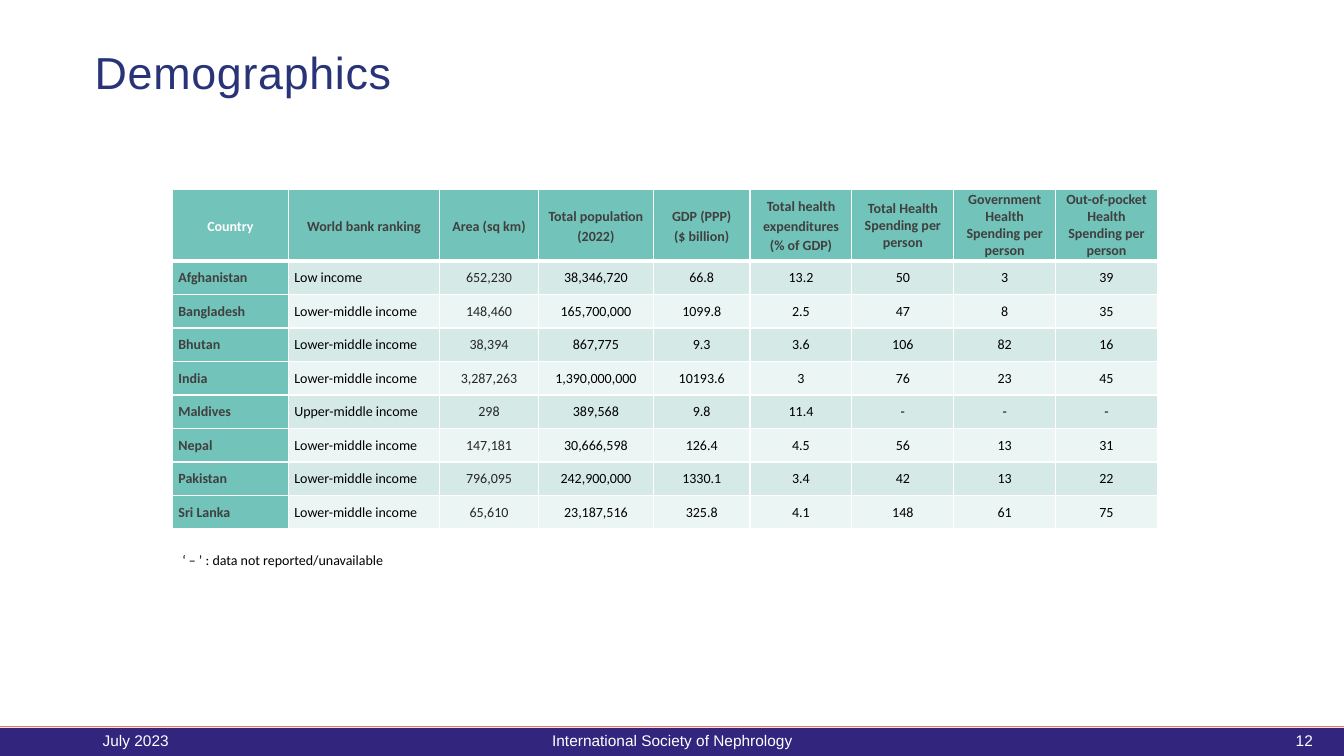
import lxml.etree
import pptx
import pptx.dml.color
import pptx.enum.shapes
import pptx.enum.text
import pptx.oxml.ns
import pptx.util

Inches = pptx.util.Inches
Pt = pptx.util.Pt
Align = pptx.enum.text.PP_ALIGN
Anchor = pptx.enum.text.MSO_ANCHOR
qn = pptx.oxml.ns.qn

TEAL = "72C3B9"
BANDS = ("D5E9E6", "EBF5F3")
COLUMN_WIDTHS = (1.15, 1.5, 0.98, 1.14, 0.96, 1.01, 1.01, 1.01, 1.01)
HEADER_HEIGHT = 0.71
ROW_HEIGHT = 0.3325
HEADERS = (
    "Country", "World bank ranking", "Area (sq km)", "Total population (2022)",
    "GDP (PPP)\n($ billion)", "Total health expenditures\n(% of GDP)",
    "Total Health Spending per person", "Government Health Spending per person",
    "Out-of-pocket Health Spending per person",
)
COUNTRIES = (
    ("Afghanistan", "Low income", "652,230", "38,346,720", "66.8", "13.2", "50", "3", "39"),
    ("Bangladesh", "Lower-middle income", "148,460", "165,700,000", "1099.8", "2.5", "47", "8", "35"),
    ("Bhutan", "Lower-middle income", "38,394", "867,775", "9.3", "3.6", "106", "82", "16"),
    ("India", "Lower-middle income", "3,287,263", "1,390,000,000", "10193.6", "3", "76", "23", "45"),
    ("Maldives", "Upper-middle income", "298", "389,568", "9.8", "11.4", "-", "-", "-"),
    ("Nepal", "Lower-middle income", "147,181", "30,666,598", "126.4", "4.5", "56", "13", "31"),
    ("Pakistan", "Lower-middle income", "796,095", "242,900,000", "1330.1", "3.4", "42", "13", "22"),
    ("Sri Lanka", "Lower-middle income", "65,610", "23,187,516", "325.8", "4.1", "148", "61", "75"),
)


def rgb(value):
    """Turn a hex string into a colour."""
    return pptx.dml.color.RGBColor.from_string(value)


def write_text(frame, text, size=10, font="Calibri", color="000000", bold=False,
               align=Align.LEFT, line_spacing=None, letter_spacing=None):
    """Fill a text frame with one formatted paragraph per line of text."""
    frame.word_wrap = True
    for index, line in enumerate(text.split("\n")):
        paragraph = frame.add_paragraph() if index else frame.paragraphs[0]
        paragraph.alignment = align
        paragraph.line_spacing = line_spacing
        run = paragraph.add_run()
        run.text = line
        run.font.size = Pt(size)
        run.font.name = font
        run.font.bold = bold
        run.font.color.rgb = rgb(color)
        if letter_spacing:
            run._r.get_or_add_rPr().set("spc", str(int(letter_spacing * 100)))


def add_text(slide, box, text, anchor=Anchor.MIDDLE, **text_format):
    """Add a text box at the given left, top, width and height."""
    shape = slide.shapes.add_textbox(*map(Inches, box))
    shape.text_frame.vertical_anchor = anchor
    write_text(shape.text_frame, text, **text_format)


def set_borders(cell, top=1, bottom=1):
    """Draw white borders round a cell, with widths in points."""
    properties = cell._tc.get_or_add_tcPr()
    for side, width in (("L", 1), ("R", 1), ("T", top), ("B", bottom)):
        line = lxml.etree.SubElement(properties, qn(f"a:ln{side}"), w=str(Pt(width)))
        fill = lxml.etree.SubElement(line, qn("a:solidFill"))
        lxml.etree.SubElement(fill, qn("a:srgbClr"), val="FFFFFF")


def style_cell(cell, text, fill, margins, borders, **text_format):
    """Give a cell its borders, fill, margins and text."""
    set_borders(cell, **borders)
    cell.fill.solid()
    cell.fill.fore_color.rgb = rgb(fill)
    cell.vertical_anchor = Anchor.MIDDLE
    side, edge = map(Inches, margins)
    cell.margin_left = cell.margin_right = side
    cell.margin_top = cell.margin_bottom = edge
    write_text(cell.text_frame, text, **text_format)


def add_header_row(table):
    """Fill the heading row of the table."""
    for column, heading in enumerate(HEADERS):
        spending = column >= 6
        style_cell(table.cell(0, column), heading, TEAL,
                   (0.05, 0.02) if spending else (0.02, 0), {"bottom": 3},
                   color="404040" if column else "FFFFFF", bold=True,
                   align=Align.CENTER, line_spacing=None if spending else 1.15)


def add_country_row(table, row, values):
    """Fill one country row, with the band colour set by its position."""
    for column, value in enumerate(values):
        style_cell(table.cell(row, column), value,
                   BANDS[(row - 1) % 2] if column else TEAL,
                   (0.01 if column > 1 else 0.06, 0),
                   {"top": 3 if row == 1 else 1},
                   color={0: "404040", 2: "262626"}.get(column, "000000"),
                   bold=column == 0,
                   align=Align.CENTER if column > 1 else Align.LEFT)


def add_demographics_table(slide, left, top):
    """Add the country table and the note below it."""
    width = sum(COLUMN_WIDTHS)
    height = HEADER_HEIGHT + ROW_HEIGHT * len(COUNTRIES)
    table = slide.shapes.add_table(len(COUNTRIES) + 1, len(HEADERS),
                                   *map(Inches, (left, top, width, height))).table
    table.horz_banding = False
    for column, column_width in zip(table.columns, COLUMN_WIDTHS):
        column.width = Inches(column_width)
    for index, row in enumerate(table.rows):
        row.height = Inches(ROW_HEIGHT if index else HEADER_HEIGHT)
    add_header_row(table)
    for row, values in enumerate(COUNTRIES, start=1):
        add_country_row(table, row, values)
    add_text(slide, (left, top + height + 0.17, 2.4, 0.27),
             "‘ – ’ : data not reported/unavailable", anchor=Anchor.TOP)


def add_footer(slide, top, width, height):
    """Add the footer bar, its rule and its three texts."""
    bar = slide.shapes.add_shape(pptx.enum.shapes.MSO_SHAPE.RECTANGLE,
                                 *map(Inches, (0, top, width, height)))
    bar.shadow.inherit = False
    bar.fill.solid()
    bar.fill.fore_color.rgb = rgb("32257E")
    bar.line.fill.background()
    rule_top = Inches(top - 0.01)
    rule = slide.shapes.add_connector(pptx.enum.shapes.MSO_CONNECTOR.STRAIGHT,
                                      0, rule_top, Inches(width), rule_top)
    rule.line.color.rgb = rgb("FE7055")
    rule.line.width = Pt(0.75)
    lxml.etree.SubElement(rule._element.spPr, qn("a:effectLst"))
    for left, text_width, text, align in (
            (0.92, 3, "July 2023", Align.LEFT),
            (4.42, 4.5, "International Society of Nephrology", Align.CENTER),
            (9.42, 3.7, "12", Align.RIGHT)):
        add_text(slide, (left, top - 0.07, text_width, 0.4), text,
                 size=11, font="Arial", color="FFFFFF", align=align)


def main():
    """Build the demographics slide and save it."""
    presentation = pptx.Presentation()
    presentation.slide_width = Inches(13.33)
    presentation.slide_height = Inches(7.5)
    slide = presentation.slides.add_slide(presentation.slide_layouts[6])
    add_footer(slide, 7.22, 13.33, 0.28)
    add_demographics_table(slide, 1.71, 1.88)
    add_text(slide, (0.84, 0.39, 9.26, 0.71), "Demographics", size=32, font="Arial",
             color="283378", line_spacing=0.9, letter_spacing=0.5)
    presentation.save("out.pptx")


if __name__ == "__main__":
    main()
